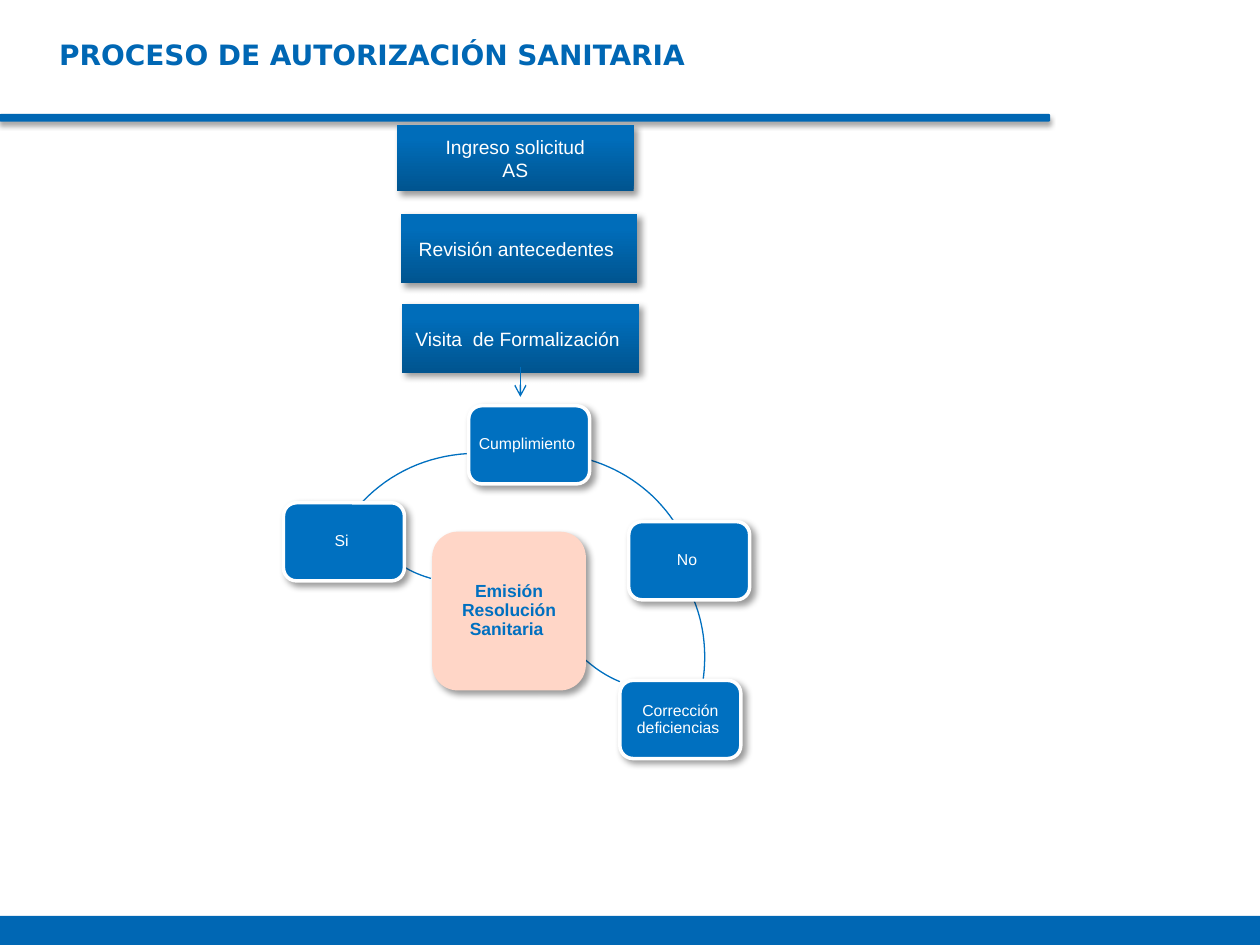
from lxml import etree
from pptx import Presentation
from pptx import util as u
from pptx.dml.color import RGBColor
from pptx.enum import shapes, text
from pptx.oxml import ns

BRAND, BLUE, WHITE, PEACH = "0067B4", "0070C0", "FFFFFF", "FFD6C7"
TITLE = "PROCESO DE AUTORIZACIÓN SANITARIA"
STEPS = [
    (["Ingreso solicitud", "AS"], (3.15, 0.99, 1.88, 0.53)),
    (["Revisión antecedentes "], (3.18, 1.7, 1.88, 0.55)),
    (["Visita  de Formalización "], (3.19, 2.41, 1.88, 0.55)),
]
NODES = [
    ("Cumplimiento ", 3.72, 3.22),
    ("No ", 4.99, 4.14),
    ("Corrección deficiencias ", 4.92, 5.4),
    ("Si ", 2.25, 3.99),
]
NODE_SIZE = (0.96, 0.62)
RESULT = ("Emisión Resolución Sanitaria ", (3.43, 4.22, 1.22, 1.26))
ARCS = [
    [(4.68, 3.65), (4.95, 3.73), (5.19, 3.9), (5.35, 4.14)],
    [(5.51, 4.77), (5.59, 4.97), (5.61, 5.19), (5.58, 5.4)],
    [(4.92, 5.41), (4.82, 5.37), (4.73, 5.31), (4.65, 5.24)],
    [(3.42, 4.59), (3.35, 4.57), (3.27, 4.54), (3.21, 4.5)],
    [(2.88, 3.98), (3.1, 3.75), (3.39, 3.62), (3.71, 3.6)],
]
ARC_STEPS = 16


def color(value):
    return RGBColor.from_string(value)


def add_box(slide, kind, place, fill=None, line=None, width=0.75):
    shape = slide.shapes.add_shape(kind, *map(u.Inches, place))
    shape.shadow.inherit = False
    if fill:
        shape.fill.solid()
        shape.fill.fore_color.rgb = color(fill)
    if line:
        shape.line.color.rgb = color(line)
        shape.line.width = u.Pt(width)
    else:
        shape.line.fill.background()
    return shape


def add_shadow(shape, alpha=40, blur=4, distance=3, angle=45):
    effects = shape._element.spPr.find(ns.qn("a:effectLst"))
    shadow = etree.SubElement(
        effects, ns.qn("a:outerShdw"), blurRad=str(u.Pt(blur)),
        dist=str(u.Pt(distance)), dir=str(angle * 60000), rotWithShape="0")
    tint = etree.SubElement(shadow, ns.qn("a:srgbClr"), val="000000")
    etree.SubElement(tint, ns.qn("a:alpha"), val=str(alpha * 1000))


def write(shape, lines, size, ink=WHITE, bold=False, spacing=1.0):
    frame = shape.text_frame
    frame.word_wrap = True
    frame.vertical_anchor = text.MSO_ANCHOR.MIDDLE
    frame.text = "\n".join(lines)
    for paragraph in frame.paragraphs:
        paragraph.alignment = text.PP_ALIGN.CENTER
        paragraph.line_spacing = spacing
        for run in paragraph.runs:
            run.font.name, run.font.size, run.font.bold = "Arial", u.Pt(size), bold
            run.font.color.rgb = color(ink)


def add_step(slide, lines, place):
    shape = add_box(slide, shapes.MSO_SHAPE.RECTANGLE, place)
    shape.fill.gradient()
    shape.fill.gradient_angle = 90
    for stop, (position, tone) in zip(shape.fill.gradient_stops, [(0, "00548F"), (0.8, "006DBA")]):
        stop.position = position
        stop.color.rgb = color(tone)
    add_shadow(shape)
    write(shape, lines, 11)


def add_node(slide, label, place, size, fill=BLUE, line=WHITE, ink=WHITE, bold=False):
    shape = add_box(slide, shapes.MSO_SHAPE.ROUNDED_RECTANGLE, place, fill, line, 2)
    add_shadow(shape)
    frame = shape.text_frame
    frame.margin_left = frame.margin_right = u.Inches(0.04)
    frame.margin_top = frame.margin_bottom = u.Inches(0.04)
    write(shape, [label], size, ink, bold, 0.9)


def curve_point(points, t):
    weights = ((1 - t) ** 3, 3 * t * (1 - t) ** 2, 3 * t * t * (1 - t), t ** 3)
    return tuple(u.Inches(sum(w * p[axis] for w, p in zip(weights, points))) for axis in (0, 1))


def add_arc(slide, points):
    path_points = [curve_point(points, i / ARC_STEPS) for i in range(ARC_STEPS + 1)]
    builder = slide.shapes.build_freeform(*path_points[0])
    builder.add_line_segments(path_points[1:], close=False)
    shape = builder.convert_to_shape()
    shape.shadow.inherit = False
    shape.fill.background()
    shape.line.color.rgb = color(BLUE)
    shape.line.width = u.Pt(0.75)


def add_arrow(slide, start, end):
    arrow = slide.shapes.add_connector(
        shapes.MSO_CONNECTOR.STRAIGHT, *map(u.Inches, start + end))
    arrow.line.color.rgb = color(BLUE)
    arrow.line.width = u.Pt(0.75)
    etree.SubElement(arrow.line._get_or_add_ln(), ns.qn("a:tailEnd"), type="arrow")
    etree.SubElement(arrow._element.spPr, ns.qn("a:effectLst"))


def add_title(slide):
    title = slide.shapes.title
    title.left, title.top, title.width, title.height = map(u.Inches, (0.17, 0.17, 8.93, 0.4))
    frame = title.text_frame
    frame.text = TITLE
    frame.auto_size = text.MSO_AUTO_SIZE.NONE
    frame.vertical_anchor = text.MSO_ANCHOR.TOP
    frame.margin_left, frame.margin_top = u.Inches(0.3), u.Inches(0.13)
    frame.margin_right = frame.margin_bottom = 0
    paragraph = frame.paragraphs[0]
    paragraph.alignment = text.PP_ALIGN.LEFT
    font = paragraph.runs[0].font
    font.name, font.size, font.bold = "DejaVu Sans", u.Pt(16), True
    font.color.rgb = color(BRAND)


def main():
    presentation = Presentation()
    presentation.slide_width, presentation.slide_height = u.Inches(10), u.Inches(7.5)
    slide = presentation.slides.add_slide(presentation.slide_layouts[5])
    add_title(slide)
    rule = add_box(slide, shapes.MSO_SHAPE.ROUNDED_RECTANGLE, (0, 0.91, 8.33, 0.05), BRAND, BRAND)
    rule.adjustments[0] = 0.12
    add_shadow(rule, 35, 3.1, 1.8, 90)
    add_box(slide, shapes.MSO_SHAPE.RECTANGLE, (0, 7.27, 10.02, 0.23), BRAND)
    for lines, place in STEPS:
        add_step(slide, lines, place)
    add_arrow(slide, (4.13, 2.91), (4.13, 3.15))
    for points in ARCS:
        add_arc(slide, points)
    for label, left, top in NODES:
        add_node(slide, label, (left, top) + NODE_SIZE, 9)
    add_node(slide, *RESULT, 10, PEACH, None, BLUE, True)
    presentation.save("out.pptx")


if __name__ == "__main__":
    main()
